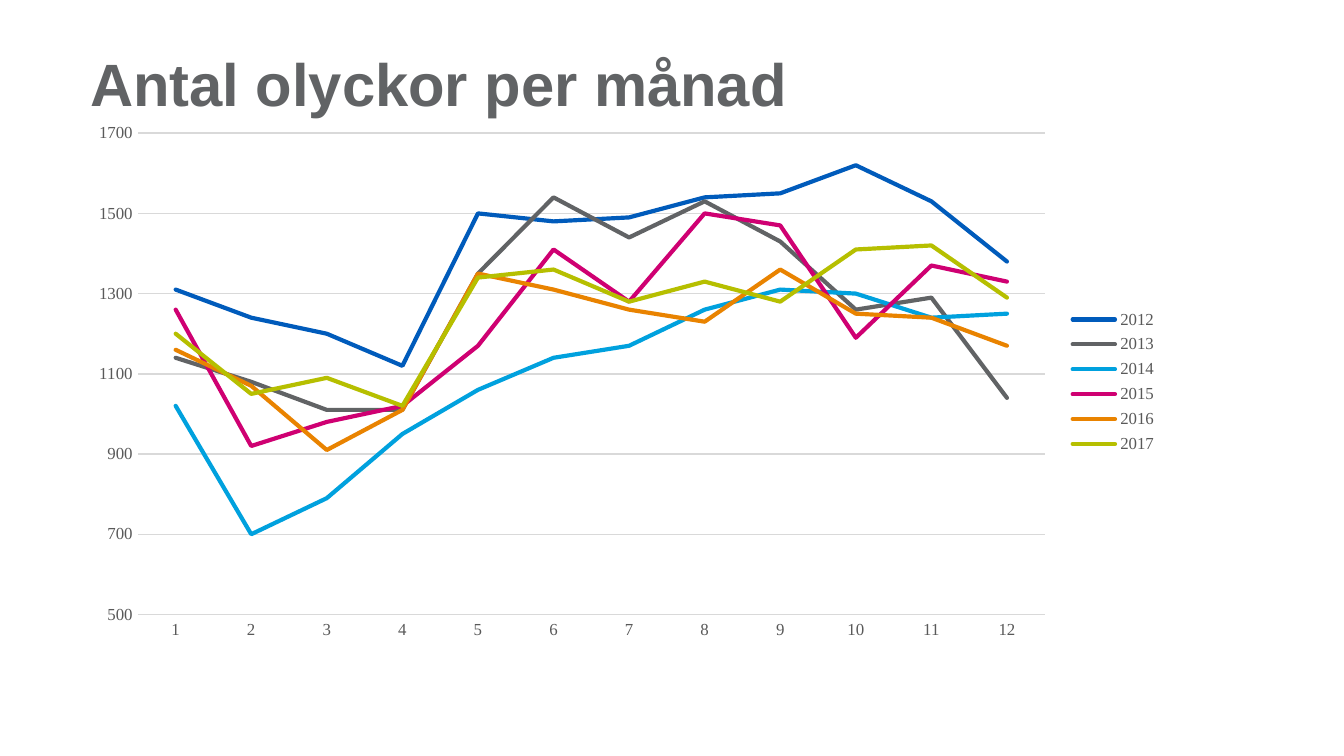
from dataclasses import dataclass
from typing import Any

from lxml.etree import SubElement as Sub
from pptx import Presentation as Deck
from pptx.chart.data import CategoryChartData as Data
from pptx.dml.color import RGBColor as Color
from pptx.enum.chart import XL_CHART_TYPE as Kind, XL_LEGEND_POSITION as Side
from pptx.enum.chart import XL_MARKER_STYLE as Mark, XL_TICK_MARK as Tick
from pptx.enum.text import MSO_ANCHOR as Anchor, PP_ALIGN as Align
from pptx.oxml.ns import qn
from pptx.util import Inches, Pt

WIDE = 10
HIGH = WIDE * 9 / 16
GREY, PALE, DARK = "616365", "D9D9D9", "595959"
SERIF = "Times New Roman"


@dataclass(frozen=True)
class Box:
    """A frame given as shares of the whole."""
    x: float
    y: float
    w: float
    h: float

    def place(self) -> tuple[int, ...]:
        """Turn the shares into slide lengths."""
        return (Inches(self.x * WIDE), Inches(self.y * HIGH),
                Inches(self.w * WIDE), Inches(self.h * HIGH))


@dataclass(frozen=True)
class Year:
    """The monthly counts of one year and its line colour."""
    name: str
    tint: str
    counts: tuple[int, ...]


HEAD = Box(0.057, 0.052, 0.887, 0.108)
GRAPH = Box(0.057, 0.15, 0.814, 0.71)
PLOT = Box(0.056, 0.037, 0.829, 0.897)
YEARS = (
    Year("2012", "005BBB", (1310, 1240, 1200, 1120, 1500, 1480, 1490, 1540, 1550, 1620, 1530, 1380)),
    Year("2013", GREY, (1140, 1080, 1010, 1010, 1350, 1540, 1440, 1530, 1430, 1260, 1290, 1040)),
    Year("2014", "00A1DE", (1020, 700, 790, 950, 1060, 1140, 1170, 1260, 1310, 1300, 1240, 1250)),
    Year("2015", "CF0072", (1260, 920, 980, 1020, 1170, 1410, 1280, 1500, 1470, 1190, 1370, 1330)),
    Year("2016", "E98300", (1160, 1070, 910, 1010, 1350, 1310, 1260, 1230, 1360, 1250, 1240, 1170)),
    Year("2017", "B6BF00", (1200, 1050, 1090, 1020, 1340, 1360, 1280, 1330, 1280, 1410, 1420, 1290)),
)


def style(font: Any, face: str, size: float, tint: str, bold: bool = False) -> None:
    """Set the face, size, colour and weight of a font."""
    font.name, font.size, font.bold = face, Pt(size), bold
    font.color.rgb = Color.from_string(tint)


def stroke(line: Any, tint: str, width: float) -> None:
    """Set the colour and width of a line."""
    line.color.rgb = Color.from_string(tint)
    line.width = Pt(width)


def title(slide: Any, text: str) -> None:
    """Place the heading in the title placeholder."""
    shape = slide.shapes.title
    shape.left, shape.top, shape.width, shape.height = HEAD.place()
    frame = shape.text_frame
    frame.word_wrap, frame.vertical_anchor = True, Anchor.BOTTOM
    frame.margin_left = frame.margin_right = Inches(0.1)
    frame.margin_top, frame.margin_bottom = 0, Inches(0.02)
    para = frame.paragraphs[0]
    para.alignment, para.line_spacing = Align.LEFT, 1.0
    run = para.add_run()
    run.text = text
    style(run.font, "Arial", 32, GREY, True)


def fix(chart: Any, box: Box) -> None:
    """Pin the inner plot area to shares of the chart."""
    area = chart.plots[0]._element.getparent()
    for old in area.findall(qn("c:layout")):
        area.remove(old)
    layout = Sub(area, qn("c:layout"))
    area.insert(0, layout)
    form = Sub(layout, qn("c:manualLayout"))
    pairs = (("layoutTarget", "inner"), ("xMode", "edge"), ("yMode", "edge"),
             ("x", box.x), ("y", box.y), ("w", box.w), ("h", box.h))
    for tag, val in pairs:
        Sub(form, qn(f"c:{tag}")).set("val", str(val))


def graph(slide: Any, years: tuple[Year, ...]) -> None:
    """Draw one line for each year over the twelve months."""
    data = Data()
    data.categories = [str(month) for month in range(1, 13)]
    for year in years:
        data.add_series(year.name, year.counts)
    chart = slide.shapes.add_chart(Kind.LINE, *GRAPH.place(), data).chart
    style(chart.font, SERIF, 10, "000000")
    chart.has_title = False
    chart.has_legend = True
    chart.legend.position, chart.legend.include_in_layout = Side.RIGHT, False
    months, scale = chart.category_axis, chart.value_axis
    for part in (chart.legend.font, months.tick_labels.font, scale.tick_labels.font):
        style(part, SERIF, 9, DARK)
    for axis in (months, scale):
        axis.major_tick_mark = axis.minor_tick_mark = Tick.NONE
    scale.minimum_scale, scale.maximum_scale, scale.major_unit = 500, 1700, 200
    scale.has_major_gridlines = True
    stroke(months.format.line, PALE, 0.75)
    stroke(scale.major_gridlines.format.line, PALE, 0.75)
    scale.format.line.fill.background()
    plot = chart.plots[0]
    plot.vary_by_categories = False
    for line, year in zip(plot.series, years):
        line.smooth, line.marker.style = False, Mark.NONE
        stroke(line.format.line, year.tint, 2.25)
        line.format.line._get_or_add_ln().set("cap", "rnd")
    fix(chart, PLOT)


def main() -> None:
    """Build and save the slide."""
    deck = Deck()
    deck.slide_width, deck.slide_height = Inches(WIDE), Inches(HIGH)
    slide = deck.slides.add_slide(deck.slide_layouts[5])
    title(slide, "Antal olyckor per månad")
    graph(slide, YEARS)
    deck.save("out.pptx")


if __name__ == "__main__":
    main()
